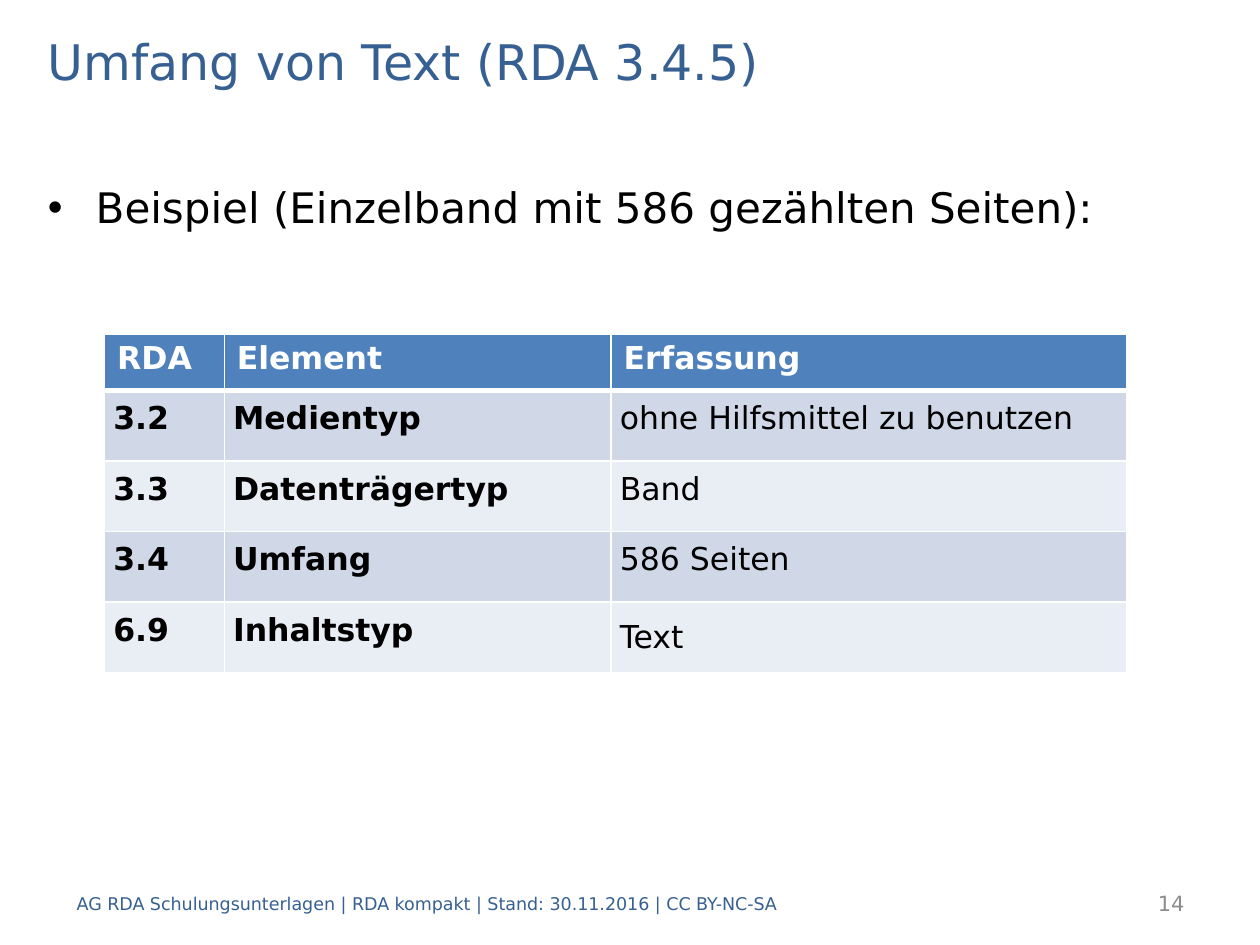
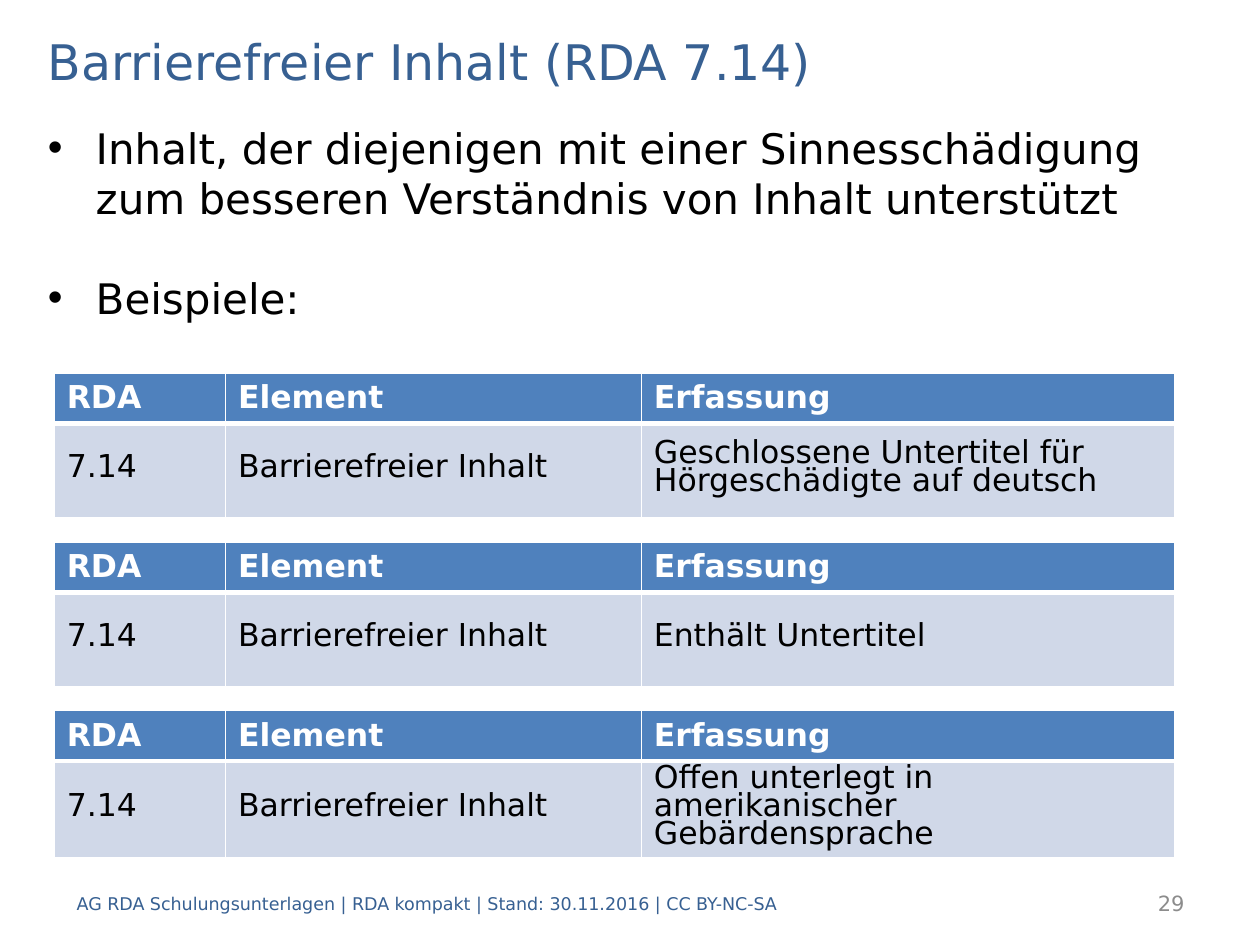
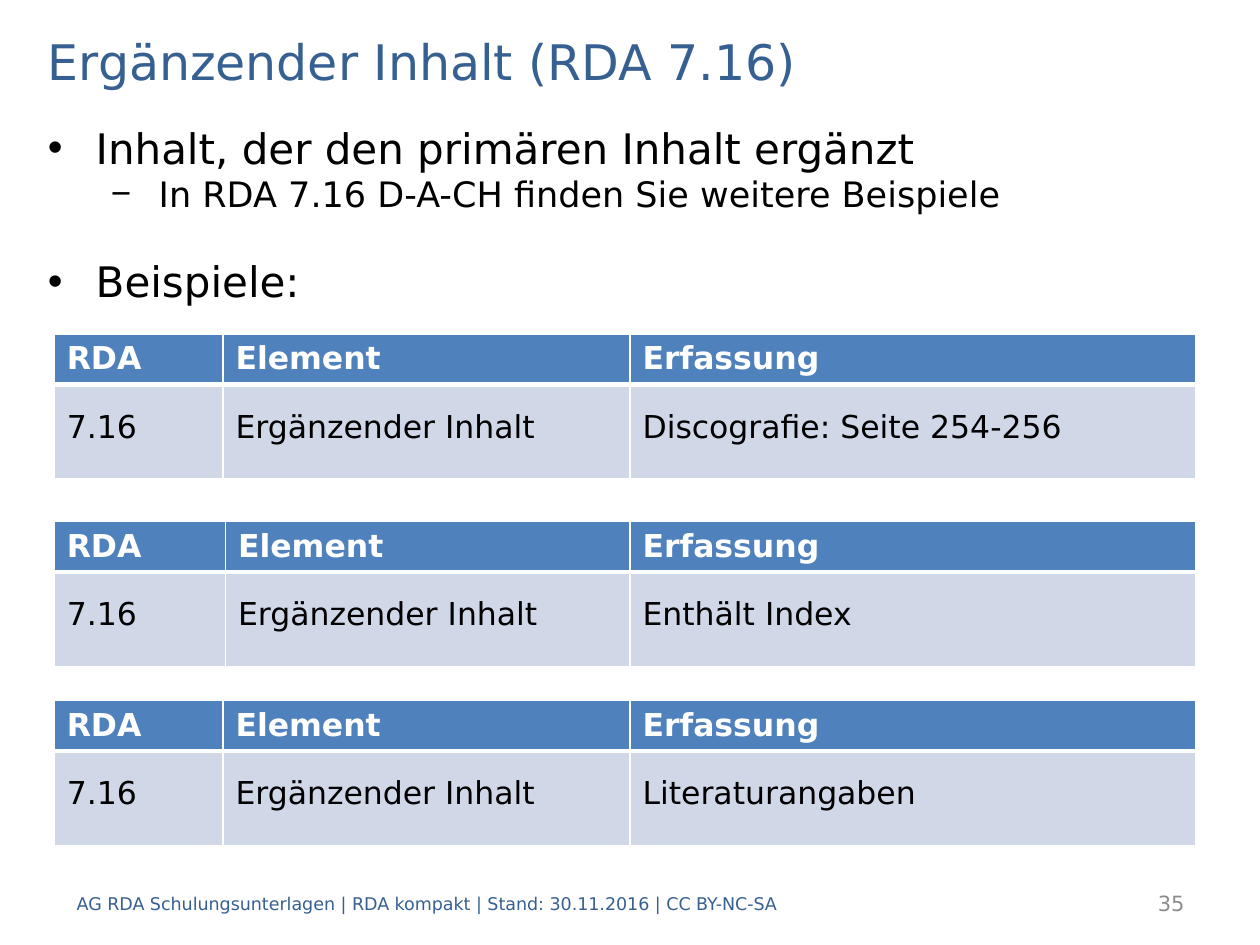
"""Builds three RDA training slides with bullet lists and example tables."""
from dataclasses import dataclass

from lxml import etree
from pptx import Presentation
from pptx.dml.color import RGBColor
from pptx.enum.text import MSO_ANCHOR, MSO_AUTO_SIZE, PP_ALIGN
from pptx.oxml.ns import qn
from pptx.util import Inches, Pt

MIDDLE, TOP = MSO_ANCHOR.MIDDLE, MSO_ANCHOR.TOP
LEFT, RIGHT = PP_ALIGN.LEFT, PP_ALIGN.RIGHT
NO_AUTOFIT = MSO_AUTO_SIZE.NONE
TITLE_AND_CONTENT = 1
GRID_COLUMNS, GRID_ROWS = 100, 75

FOOTER = "AG RDA Schulungsunterlagen | RDA kompakt | Stand: 30.11.2016 | CC BY-NC-SA"
TABLE_HEADER = ("RDA", "Element", "Erfassung")
COMPACT_MARGINS = {"margin_left": Inches(0.07), "margin_right": Inches(0.07),
                   "margin_top": 0, "margin_bottom": 0}
COMPACT_SPACING = {"line_spacing": Pt(13), "space_after": Pt(6)}
ROOMY_SPACING = {"line_spacing": Pt(16), "space_before": Pt(6), "space_after": Pt(6)}


@dataclass(frozen=True)
class Theme:
    font: str = "DejaVu Sans"
    title: str = "376092"
    text: str = "000000"
    number: str = "8C8C8C"
    white: str = "FFFFFF"
    header: str = "4F81BD"
    bands: tuple = ("D0D8E8", "E9EDF4")
    title_size: int = 28
    list_sizes: tuple = (24, 20)
    bullets: tuple = ("•", "−")
    indents: tuple = (0.38, 0.88)
    hanging: float = 0.38
    table_size: int = 18
    footer_size: int = 10
    number_size: int = 12
    border: int = 1
    header_border: int = 3


def apply(target, values):
    for name, value in values.items():
        setattr(target, name, value)


class Deck:
    """Holds the theme and the current slide and draws each kind of element."""

    def __init__(self, theme):
        self.theme = theme
        self.presentation = Presentation()
        apply(self.presentation, {"slide_width": Inches(10), "slide_height": Inches(7.5)})
        self.slide = None

    def across(self, columns):
        return round(self.presentation.slide_width * columns / GRID_COLUMNS)

    def down(self, rows):
        return round(self.presentation.slide_height * rows / GRID_ROWS)

    def box(self, left, top, width, height):
        return {"left": self.across(left), "top": self.down(top),
                "width": self.across(width), "height": self.down(height)}

    def add_text(self, paragraph, text, size, color, bold=False, **spacing):
        run = paragraph.add_run()
        run.text = text
        apply(run.font, {"name": self.theme.font, "size": Pt(size), "bold": bold})
        run.font.color.rgb = RGBColor.from_string(color)
        apply(paragraph, spacing)

    def add_slide(self, title, number):
        layout = self.presentation.slide_layouts[TITLE_AND_CONTENT]
        self.slide = self.presentation.slides.add_slide(layout)
        theme = self.theme
        shape = self.slide.shapes.title
        apply(shape, self.box(2.8, 2, 94.5, 5.6))
        apply(shape.text_frame, {"vertical_anchor": MIDDLE, "auto_size": NO_AUTOFIT})
        self.add_text(shape.text_frame.paragraphs[0], title, theme.title_size,
                      theme.title, alignment=LEFT)
        self.add_label(FOOTER, 5.1, 66.9, theme.footer_size, theme.title, LEFT)
        self.add_label(str(number), 79.1, 15.9, theme.number_size, theme.number, RIGHT)

    def add_label(self, text, left, width, size, color, alignment):
        shape = self.slide.shapes.add_textbox(**self.box(left, 69.7, width, 4))
        apply(shape.text_frame, {"word_wrap": True, "vertical_anchor": MIDDLE})
        self.add_text(shape.text_frame.paragraphs[0], text, size, color, alignment=alignment)

    def add_list(self, items, width, height, top_margin=0.05):
        theme = self.theme
        shape = self.slide.placeholders[1]
        apply(shape, self.box(2.8, 9.2, width, height))
        frame = shape.text_frame
        apply(frame, {"auto_size": NO_AUTOFIT, "margin_top": Inches(top_margin)})
        for index, (level, gap, text) in enumerate(items):
            paragraph = frame.add_paragraph() if index else frame.paragraphs[0]
            self.add_text(paragraph, text, theme.list_sizes[level], theme.text,
                          level=level, space_before=Pt(gap))
            properties = paragraph._p.get_or_add_pPr()
            properties.set("marL", str(Inches(theme.indents[level])))
            properties.set("indent", str(-Inches(theme.hanging)))
            bullet = etree.SubElement(properties, qn("a:buChar"))
            bullet.set("char", theme.bullets[level])

    def add_borders(self, cell, row):
        theme = self.theme
        widths = {"a:lnL": theme.border, "a:lnR": theme.border,
                  "a:lnT": theme.header_border if row == 1 else theme.border,
                  "a:lnB": theme.border if row else theme.header_border}
        properties = cell._tc.get_or_add_tcPr()
        for position, (tag, width) in enumerate(widths.items()):
            line = etree.Element(qn(tag), w=str(Pt(width)))
            fill = etree.SubElement(line, qn("a:solidFill"))
            etree.SubElement(fill, qn("a:srgbClr"), val=theme.white)
            properties.insert(position, line)

    def add_table(self, records, left, top, columns, rows, spacing,
                  margins=None, bold_columns=0):
        theme = self.theme
        table = self.slide.shapes.add_table(
            len(rows), len(columns), **self.box(left, top, sum(columns), sum(rows))).table
        for column, width in zip(table.columns, columns):
            column.width = self.across(width)
        for index, values in enumerate((TABLE_HEADER, *records)):
            table.rows[index].height = self.down(rows[index])
            body = index > 0
            background = theme.bands[(index - 1) % 2] if body else theme.header
            for position, text in enumerate(values):
                cell = table.cell(index, position)
                cell.fill.solid()
                cell.fill.fore_color.rgb = RGBColor.from_string(background)
                cell.vertical_anchor = MIDDLE if body else TOP
                if body:
                    apply(cell, margins or {})
                self.add_borders(cell, index)
                self.add_text(cell.text_frame.paragraphs[0], text, theme.table_size,
                              theme.text if body else theme.white,
                              not body or position < bold_columns,
                              **(spacing if body else {}))
        return table

    def add_examples(self, number, element, entries, tops, column_sets):
        for entry, top, columns in zip(entries, tops, column_sets):
            self.add_table([(number, element, entry)], 4.3, top, columns,
                           (4, 7.5), ROOMY_SPACING)


def main():
    deck = Deck(Theme())

    deck.add_slide("Umfang von Text (RDA 3.4.5)", 14)
    deck.add_list([(0, 0, "Beispiel (Einzelband mit 586 gezählten Seiten):")],
                  94.5, 59.8, top_margin=0.52)
    extent = deck.add_table(
        [("3.2", "Medientyp", "ohne Hilfsmittel zu benutzen"),
         ("3.3", "Datenträgertyp", "Band"),
         ("3.4", "Umfang", "586 Seiten"),
         ("6.9", "Inhaltstyp", "Text")],
        8.3, 26.5, (9.5, 30.7, 40.9), (4.5, *[5.6] * 4),
        COMPACT_SPACING, COMPACT_MARGINS, bold_columns=2)
    extent.cell(4, 2).text_frame.paragraphs[0].line_spacing = None

    deck.add_slide("Barrierefreier Inhalt (RDA 7.14)", 29)
    deck.add_list([(0, 0, "Inhalt, der diejenigen mit einer Sinnesschädigung zum "
                          "besseren Verständnis von Inhalt unterstützt"),
                   (0, 28, "Beispiele:")], 90.2, 17.2)
    deck.add_examples("7.14", "Barrierefreier Inhalt",
                      ("Geschlossene Untertitel für Hörgeschädigte auf deutsch",
                       "Enthält Untertitel",
                       "Offen unterlegt in amerikanischer Gebärdensprache"),
                      [29.6 + 13.4 * index for index in range(3)],
                      [(13.6, 33, 42.3)] * 3)

    deck.add_slide("Ergänzender Inhalt (RDA 7.16)", 35)
    deck.add_list([(0, 0, "Inhalt, der den primären Inhalt ergänzt"),
                   (1, 0, "In RDA 7.16 D-A-CH finden Sie weitere Beispiele"),
                   (0, 23.5, "Beispiele:")], 90.2, 15.8)
    outer_columns = (13.4, 32.3, 44.9)
    deck.add_examples("7.16", "Ergänzender Inhalt",
                      ("Discografie: Seite 254-256", "Enthält Index", "Literaturangaben"),
                      (26.5, 41.4, 55.6),
                      (outer_columns, (13.6, 32.1, 44.9), outer_columns))

    deck.presentation.save("out.pptx")


if __name__ == "__main__":
    main()
